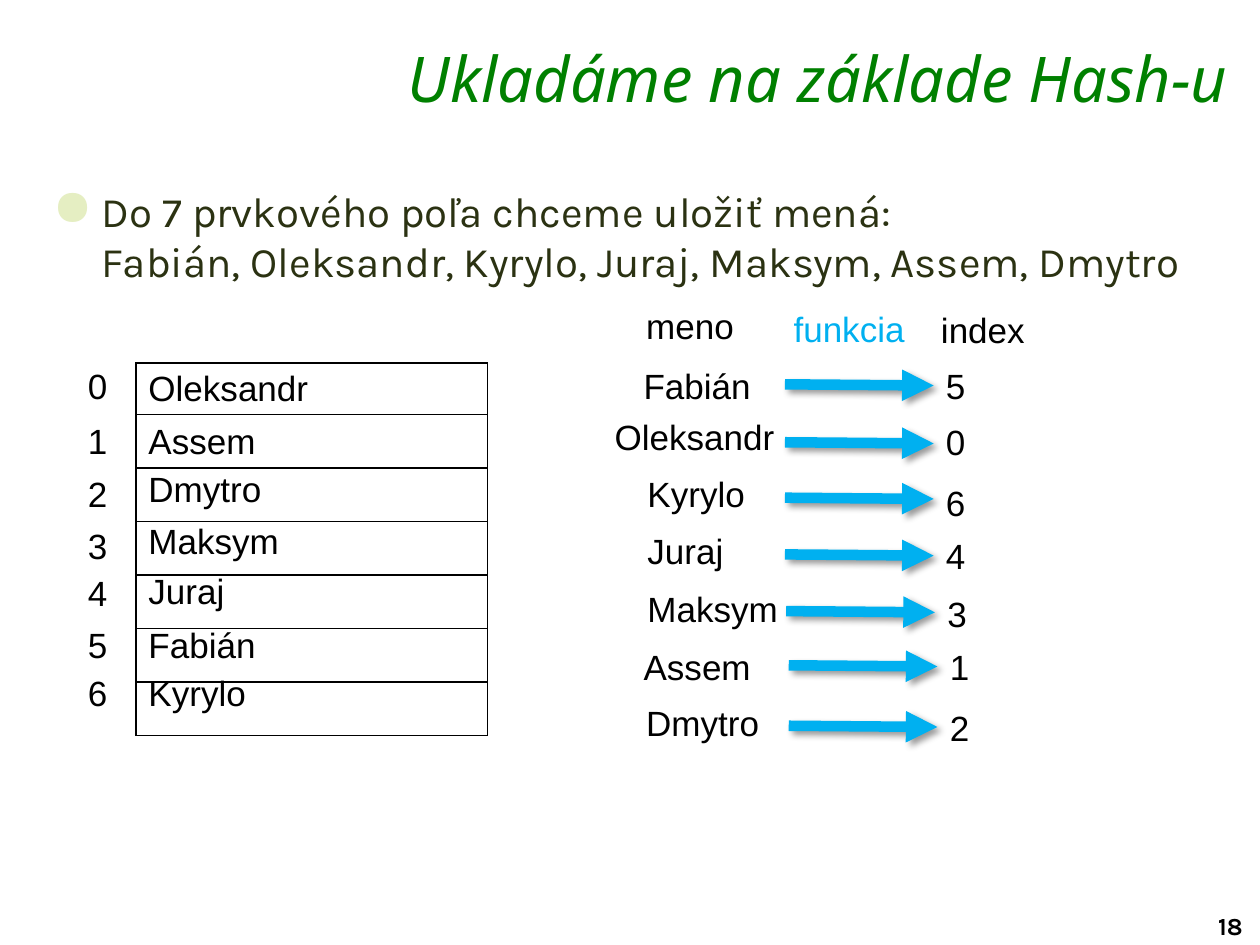
from lxml.etree import SubElement
from pptx import Presentation
from pptx.dml.color import RGBColor
from pptx.enum.shapes import MSO_CONNECTOR
from pptx.enum.text import MSO_ANCHOR, MSO_AUTO_SIZE, PP_ALIGN
from pptx.oxml.ns import qn
from pptx.util import Inches, Pt

BLACK, BLUE, GREEN, OLIVE, LIME = "000000", "00B0F0", "008000", "2B3212", "E5EEC2"


def color(value):
    """Turn a hex string into a colour."""
    return RGBColor.from_string(value)


def add_element(parent, tag, **attributes):
    """Append a drawing element with its attributes."""
    element = SubElement(parent, qn(f"a:{tag}"))
    for name, value in attributes.items():
        element.set(name, str(value))
    return element


class HashSlide:
    """Hold the style and slide; lengths are cells of a 100 by 75 grid."""

    def __init__(self, presentation):
        """Set the slide size and add a blank slide."""
        presentation.slide_width, presentation.slide_height = Inches(10), Inches(7.5)
        self.cell = presentation.slide_width / 100
        self.slide = presentation.slides.add_slide(presentation.slide_layouts[6])

    def grid(self, *cells):
        """Convert grid cells to slide lengths."""
        return [round(count * self.cell) for count in cells]

    def text(self, box, text, size=20, font="Arial", ink=BLACK, wrap=False,
             align=PP_ALIGN.LEFT, bold=False, italic=False, bullet=None):
        """Add a text box with one styled paragraph."""
        shape = self.slide.shapes.add_textbox(*self.grid(*box))
        frame = shape.text_frame
        frame.text = text
        frame.word_wrap = wrap
        frame.auto_size = MSO_AUTO_SIZE.NONE if wrap else MSO_AUTO_SIZE.SHAPE_TO_FIT_TEXT
        frame.vertical_anchor = MSO_ANCHOR.TOP
        paragraph = frame.paragraphs[0]
        paragraph.alignment = align
        if bullet:
            self.bullet(paragraph, bullet)
        for run in paragraph.runs:
            run.font.size, run.font.name = Pt(size), font
            run.font.bold, run.font.italic = bold, italic
            run.font.color.rgb = color(ink)
        return frame

    def bullet(self, paragraph, ink):
        """Give a paragraph a large round bullet and a hanging indent."""
        properties = paragraph._p.get_or_add_pPr()
        indent, = self.grid(3.9)
        properties.set("marL", str(indent))
        properties.set("indent", str(-indent))
        add_element(add_element(properties, "buClr"), "srgbClr", val=ink)
        add_element(properties, "buSzPct", val=120000)
        add_element(properties, "buChar", char="●")

    def arrow(self, left, top, width, drop):
        """Add a thick arrow with a soft shadow."""
        ends = self.grid(left, top, left + width, top + drop)
        connector = self.slide.shapes.add_connector(MSO_CONNECTOR.STRAIGHT, *ends)
        connector.line.width = Pt(6)
        connector.line.color.rgb = color(BLUE)
        add_element(connector.line._get_or_add_ln(), "tailEnd", type="triangle")
        effects = add_element(connector._element.spPr, "effectLst")
        shadow = add_element(effects, "outerShdw", blurRad=Pt(4), dist=Pt(3),
                             dir=45 * 60000, rotWithShape=0)
        add_element(add_element(shadow, "srgbClr", val=BLACK), "alpha", val=40000)

    def array(self, left, top, width, heights):
        """Add an empty one-column table with thin borders."""
        box = self.grid(left, top, width, sum(heights))
        table = self.slide.shapes.add_table(len(heights), 1, *box).table
        table.first_row = table.horz_banding = False
        for row, height in zip(table.rows, heights):
            row.height, = self.grid(height)
            cell = row.cells[0]
            properties = cell._tc.get_or_add_tcPr()
            for side in ("lnL", "lnR", "lnT", "lnB"):
                border = add_element(properties, side, w=Pt(1))
                add_element(add_element(border, "solidFill"), "srgbClr", val=BLACK)
            cell.fill.solid()
            cell.fill.fore_color.rgb = color("FFFFFF")


def main():
    """Build the slide about storing names by hash."""
    presentation = Presentation()
    page = HashSlide(presentation)
    page.text((95.7, 71.8, 5.1, 3.3), "18", 14, "Karla", bold=True)
    title = page.text((22.9, 3.1, 75.5, 5.8), "Ukladáme na základe Hash-u", 36, "Noto Sans",
                      GREEN, wrap=True, align=PP_ALIGN.RIGHT, italic=True)
    title.margin_top = title.margin_bottom = 0
    page.text((3.2, 14.2, 93.8, 12.5),
              "Do 7 prvkového poľa chceme uložiť mená:\v"
              "Fabián, Oleksandr, Kyrylo, Juraj, Maksym, Assem, Dmytro",
              24, "Karla", OLIVE, wrap=True, bullet=LIME)
    page.array(10.8, 28.8, 27.9, [4.1] + [4.25] * 6)

    line_height, digit_width, arrow_width = 4.4, 3.6, 11.8
    headers = [("meno", 50.3, 23.7, 9, BLACK), ("funkcia", 62, 23.9, 10.9, BLUE),
               ("index", 73.7, 24, 8.7, BLACK)]
    for header, left, top, width, ink in headers:
        page.text((left, top, width, line_height), header, ink=ink)

    slot_tops = [28.4, 32.8, 37, 41.1, 44.9, 49, 52.8]
    stored_tops = [28.6, 32.8, 36.6, 40.7, 44.7, 49, 52.8]
    for index, top in enumerate(slot_tops):
        page.text((6, top, digit_width, line_height), str(index))

    # name, width, index, name left and top, arrow left and top, index top
    mappings = [("Fabián", 10.6, 5, 50.1, 28.4, 62.3, 30.5, 28.4),
                ("Oleksandr", 14.8, 0, 47.8, 32.5, 62.3, 35.1, 32.9),
                ("Kyrylo", 9.8, 6, 50.4, 37, 62.3, 39.5, 37.7),
                ("Juraj", 8.1, 4, 50.4, 41.5, 62.3, 44, 41.9),
                ("Maksym", 12.5, 3, 50.4, 46.1, 62.4, 48.5, 46.5),
                ("Assem", 10.6, 1, 50.1, 50.7, 62.6, 52.8, 50.7),
                ("Dmytro", 11, 2, 50.3, 55.2, 62.6, 57.6, 55.6)]
    for name, width, index, left, top, arrow_left, arrow_top, index_top in mappings:
        page.text((left, top, width, line_height), name)
        page.arrow(arrow_left, arrow_top, arrow_width, 0.1)
        page.text((arrow_left + arrow_width, index_top, digit_width, line_height), str(index))
        page.text((10.8, stored_tops[index], width, line_height), name)
    presentation.save("out.pptx")


if __name__ == "__main__":
    main()
